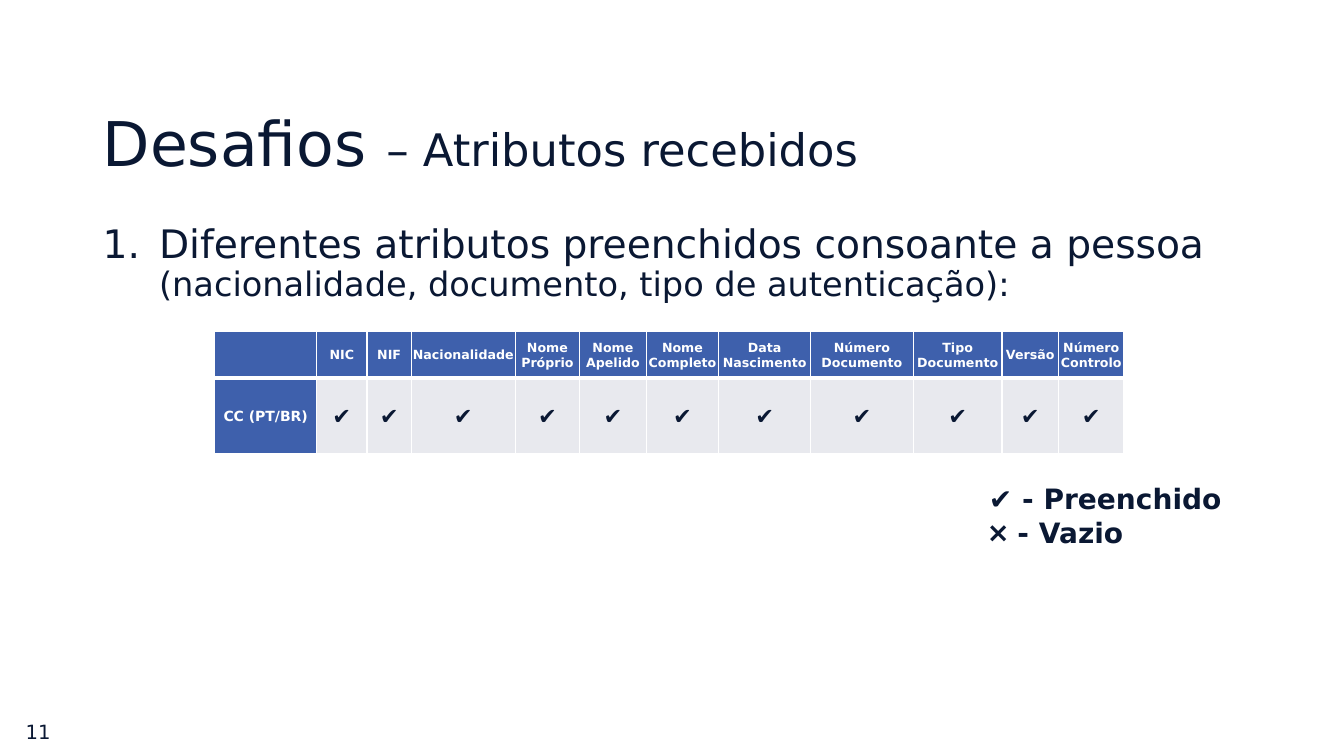
from lxml import etree
from pptx import Presentation
from pptx.dml.color import RGBColor
from pptx.enum.text import MSO_ANCHOR, PP_ALIGN
from pptx.oxml.ns import qn
from pptx.util import Inches, Pt

LEFT, CENTER, RIGHT = PP_ALIGN.LEFT, PP_ALIGN.CENTER, PP_ALIGN.RIGHT
TOP, MIDDLE = MSO_ANCHOR.TOP, MSO_ANCHOR.MIDDLE
NAVY, BLUE, GRAY, WHITE = "0A1833", "3E60AC", "E8E9EE", "FFFFFF"

HEADS = ["", "NIC", "NIF", "Nacionalidade", "Nome Próprio", "Nome Apelido",
         "Nome Completo", "Data Nascimento", "Número Documento",
         "Tipo Documento", "Versão", "Número Controlo"]
WIDTHS = [1.01, 0.5, 0.44, 1.03, 0.64, 0.66, 0.72, 0.91, 1.02, 0.88, 0.56, 0.65]
HEIGHTS = [0.46, 0.75]
CHECK = "✔️"


def color(text):
    return RGBColor.from_string(text)


class Deck:
    font = "DejaVu Sans"

    def __init__(self):
        self.show = Presentation()
        self.show.slide_width = Inches(13.33)
        self.show.slide_height = Inches(7.5)
        self.slide = self.show.slides.add_slide(self.show.slide_layouts[6])

    def words(self, para, runs, ink=NAVY, bold=False, align=LEFT):
        para.alignment = align
        for text, size in runs:
            run = para.add_run()
            run.text = text
            for key, value in {"name": self.font, "size": Pt(size), "bold": bold}.items():
                setattr(run.font, key, value)
            run.font.color.rgb = color(ink)

    def text(self, box, lines, anchor=TOP, space=1.0, number=False, **style):
        frame = self.slide.shapes.add_textbox(*map(Inches, box)).text_frame
        frame.word_wrap = True
        frame.vertical_anchor = anchor
        for i, runs in enumerate(lines):
            para = frame.add_paragraph() if i else frame.paragraphs[0]
            para.line_spacing = space
            if number:
                self.number(para)
            self.words(para, runs, **style)

    def number(self, para):
        props = para._p.get_or_add_pPr()
        props.set("marL", str(Inches(0.56)))
        props.set("indent", str(Inches(-0.56)))
        etree.SubElement(props, qn("a:buAutoNum"), type="arabicPeriod")

    def border(self, cell, widths):
        props = cell._tc.get_or_add_tcPr()
        for i, (side, width) in enumerate(widths.items()):
            line = etree.Element(qn("a:ln" + side), w=str(Pt(width)))
            fill = etree.SubElement(line, qn("a:solidFill"))
            etree.SubElement(fill, qn("a:srgbClr"), val=WHITE)
            props.insert(i, line)

    def cell(self, cell, text, size, ink, fill, lines):
        margins = {"margin_left": 0.01, "margin_right": 0.01,
                   "margin_top": 0.01, "margin_bottom": 0}
        for key, value in margins.items():
            setattr(cell, key, Inches(value))
        cell.vertical_anchor = MIDDLE
        cell.fill.solid()
        cell.fill.fore_color.rgb = color(fill)
        if text:
            self.words(cell.text_frame.paragraphs[0], [(text, size)], ink, True, CENTER)
        self.border(cell, lines)

    def table(self, left, top, rows):
        box = map(Inches, (left, top, sum(WIDTHS), sum(HEIGHTS)))
        grid = self.slide.shapes.add_table(len(rows), len(WIDTHS), *box).table
        for col, width in zip(grid.columns, WIDTHS):
            col.width = Inches(width)
        for r, row in enumerate(rows):
            grid.rows[r].height = Inches(HEIGHTS[r])
            lines = {"L": 1, "R": 1, "T": 3 if r else 1, "B": 1 if r else 3}
            for c, text in enumerate(row):
                if r and c:
                    look = (16, NAVY, GRAY)
                else:
                    look = (10 if r else 9, WHITE, BLUE)
                self.cell(grid.cell(r, c), text, *look, lines)


def main():
    deck = Deck()
    deck.text((0.92, 0.73, 11.5, 1.45),
              [[("Desafios ", 44), ("– Atributos recebidos", 32)]],
              anchor=MIDDLE, space=0.9)
    deck.text((0.92, 2.18, 11.5, 4.59),
              [[("Diferentes atributos preenchidos consoante a pessoa ", 28),
                ("(nacionalidade, documento, tipo de autenticação):", 24)]],
              space=0.9, number=True)
    deck.table(2.13, 3.29, [HEADS, ["CC (PT/BR)"] + [CHECK] * (len(HEADS) - 1)])
    deck.text((9.71, 4.73, 2.89, 1.51),
              [[(CHECK + " - Preenchido", 20)], [("❌ - Vazio", 20)]], bold=True)
    deck.text((0, 7.06, 0.6, 0.4), [[("11", 14)]], anchor=MIDDLE, align=RIGHT)
    deck.show.save("out.pptx")


if __name__ == "__main__":
    main()
